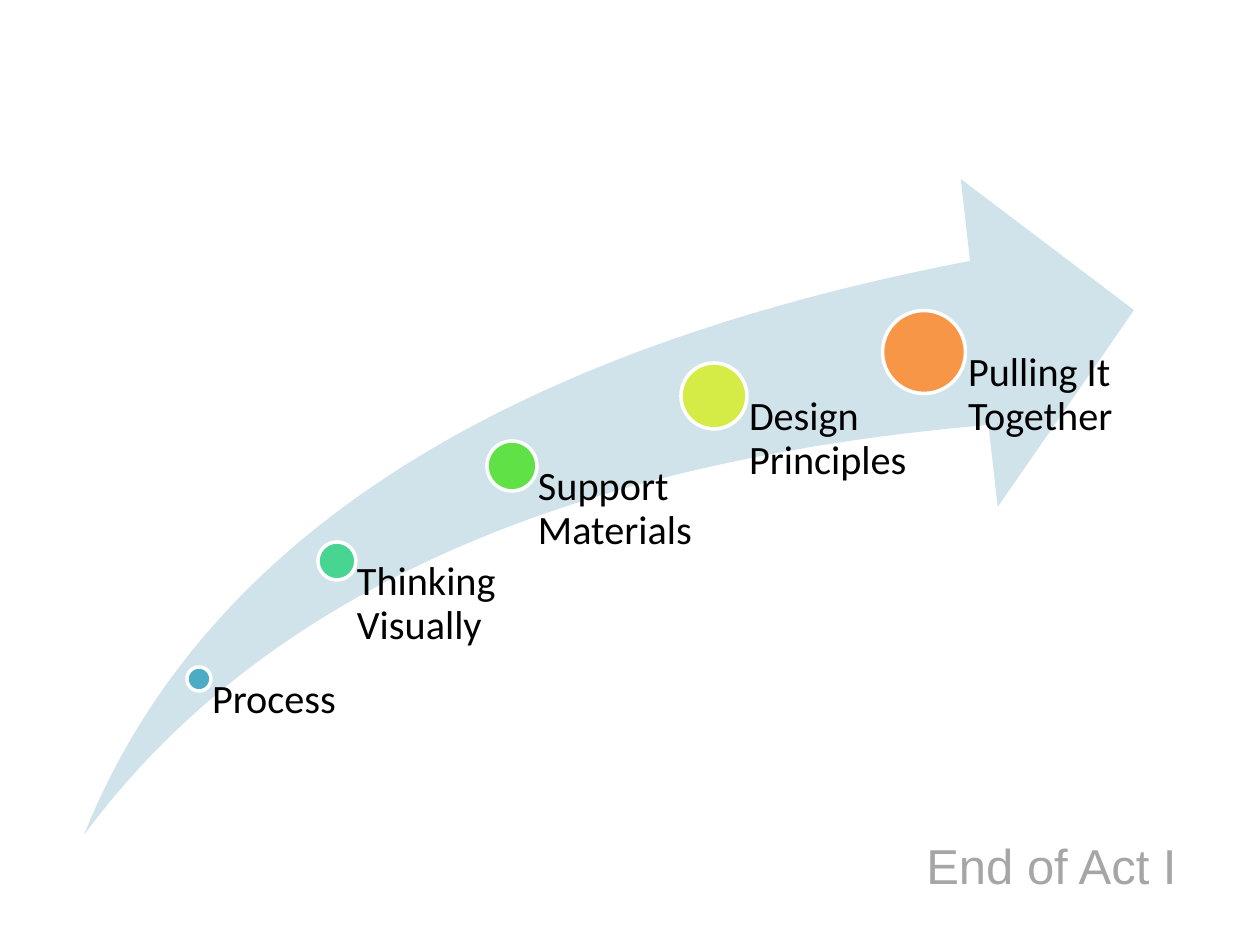
"""Build a slide with five growing milestones along a rising arrow."""
import pptx
import pptx.dml.color
import pptx.enum.shapes
import pptx.enum.text
import pptx.util

SCALE = 914400 / 126
SHAPE = pptx.enum.shapes.MSO_SHAPE
THEME = {
    "arrow": "D0E3EA",
    "outline": "FFFFFF",
    "label": {"name": "Calibri", "size": pptx.util.Pt(23), "color": "000000"},
    "closing": {"name": "Arial", "size": pptx.util.Pt(28), "color": "A6A6A6"},
}
BOTTOM = 835
MILESTONES = [
    ("Process", 199, 679, 24, 144, "4BACC6"),
    ("Thinking Visually", 337, 561, 38, 174, "48D491"),
    ("Support Materials", 512, 466, 50, 203, "60E146"),
    ("Design Principles", 714, 396, 66, 210, "D5EC46"),
    ("Pulling It Together", 924, 352, 83, 210, "F79646"),
]


def place(*lengths):
    return [pptx.util.Emu(round(length * SCALE)) for length in lengths]


def write(box, text, font, frame_format, para_format):
    for name, value in frame_format.items():
        setattr(box.text_frame, name, value)
    para = box.text_frame.paragraphs[0]
    for name, value in para_format.items():
        setattr(para, name, value)
    span = para.add_run()
    span.text = text
    for name in ("name", "size"):
        setattr(span.font, name, font[name])
    span.font.color.rgb = pptx.dml.color.RGBColor.from_string(font["color"])


deck = pptx.Presentation()
deck.slide_width, deck.slide_height = place(1260, 945)
page = deck.slides.add_slide(deck.slide_layouts[6])

arrow = page.shapes.add_shape(SHAPE.SWOOSH_ARROW, *place(84, 179, 1050, 656))
arrow.shadow.inherit = False
arrow.adjustments[0] = 0.25
arrow.adjustments[1] = 0.25
arrow.fill.solid()
arrow.fill.fore_color.rgb = pptx.dml.color.RGBColor.from_string(THEME["arrow"])
arrow.line.fill.background()

for text, center_x, center_y, size, width, color in MILESTONES:
    dot = page.shapes.add_shape(
        SHAPE.OVAL, *place(center_x - size / 2, center_y - size / 2, size, size))
    dot.shadow.inherit = False
    dot.fill.solid()
    dot.fill.fore_color.rgb = pptx.dml.color.RGBColor.from_string(color)
    dot.line.color.rgb = pptx.dml.color.RGBColor.from_string(THEME["outline"])
    dot.line.width = pptx.util.Pt(2)

    label = page.shapes.add_textbox(
        *place(center_x, center_y, width, BOTTOM - center_y))
    inset = place(round(size * 0.53))[0]
    write(label, text, THEME["label"],
          {"word_wrap": True, "margin_left": inset, "margin_top": 0,
           "margin_right": 0, "margin_bottom": 0},
          {"line_spacing": 0.9, "space_after": pptx.util.Pt(8)})

closing = page.shapes.add_textbox(*place(914, 829, 280, 72))
write(closing, "End of Act I", THEME["closing"],
      {"word_wrap": False,
       "auto_size": pptx.enum.text.MSO_AUTO_SIZE.SHAPE_TO_FIT_TEXT}, {})

deck.save("out.pptx")
